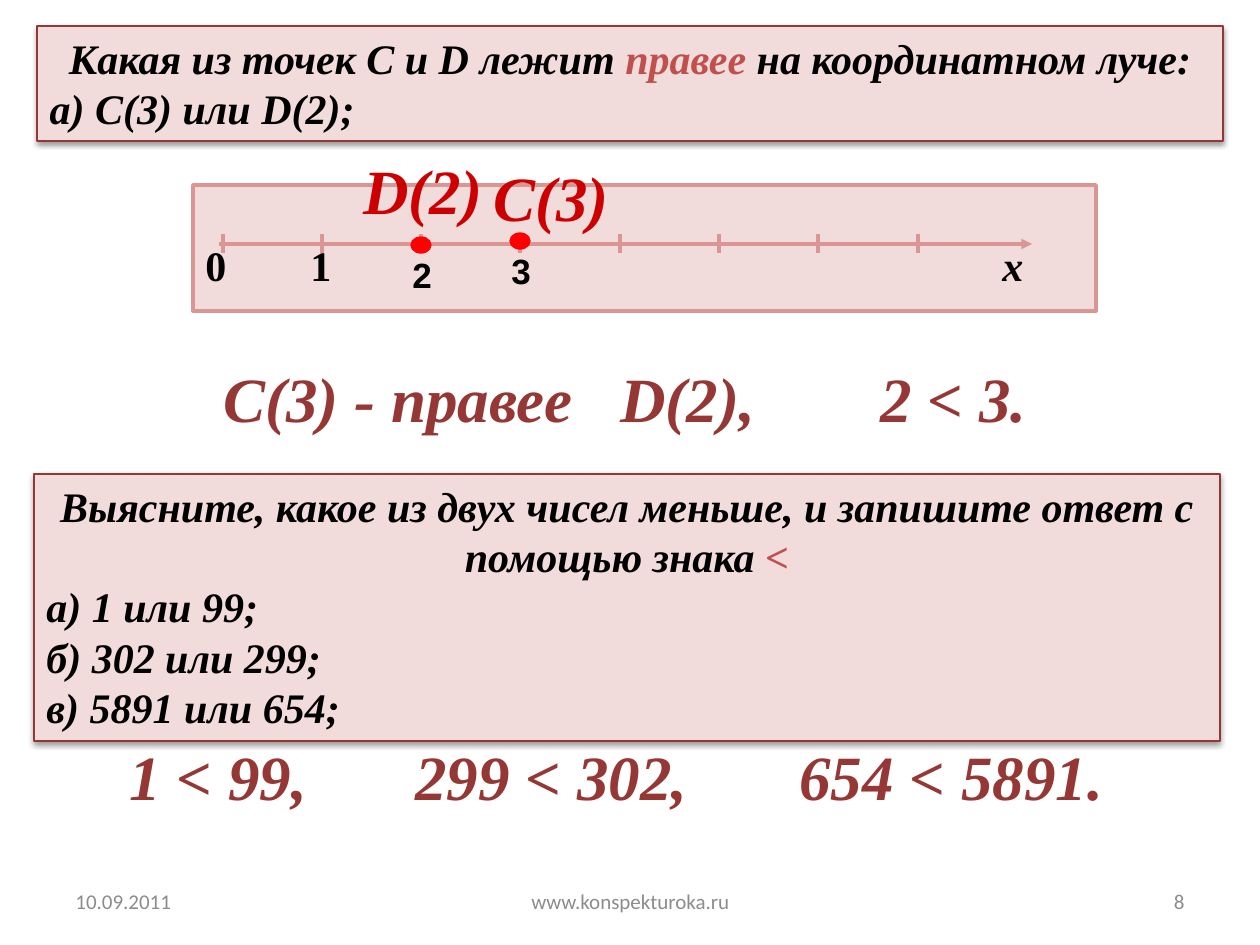
from lxml import etree
from pptx import Presentation
from pptx.dml.color import RGBColor
from pptx.enum.shapes import MSO_CONNECTOR, MSO_SHAPE
from pptx.enum.text import MSO_ANCHOR, MSO_AUTO_SIZE, PP_ALIGN
from pptx.oxml.ns import qn
from pptx.util import Emu, Pt

LEFT, CENTER, RIGHT = PP_ALIGN.LEFT, PP_ALIGN.CENTER, PP_ALIGN.RIGHT
TOP, MIDDLE, BOTTOM = MSO_ANCHOR.TOP, MSO_ANCHOR.MIDDLE, MSO_ANCHOR.BOTTOM
RECTANGLE, OVAL = MSO_SHAPE.RECTANGLE, MSO_SHAPE.OVAL
STRAIGHT = MSO_CONNECTOR.STRAIGHT
NO_AUTOFIT = MSO_AUTO_SIZE.NONE

EMU_PER_PX = 914400 / 126
SERIF = "Times New Roman"
BLACK, PINK, ROSE, WINE = "000000", "F2DCDB", "D99694", "953735"
ACCENT, RED, CRIMSON, GRAY = "C0504D", "FF0000", "CC0000", "8C8C8C"


def px(value):
    return Emu(round(value * EMU_PER_PX))


def rgb(value):
    return RGBColor.from_string(value)


def paint(shape, fill, line, width):
    shape.shadow.inherit = False
    shape.fill.solid()
    shape.fill.fore_color.rgb = rgb(fill)
    shape.line.color.rgb = rgb(line)
    shape.line.width = Pt(width)


def add_drop_shadow(shape):
    effects = shape._element.spPr.find(qn("a:effectLst"))
    outer = etree.SubElement(effects, qn("a:outerShdw"), blurRad=str(Pt(3.1)),
                             dist=str(Pt(1.6)), dir="5400000", rotWithShape="0")
    color = etree.SubElement(outer, qn("a:srgbClr"), val=BLACK)
    etree.SubElement(color, qn("a:alpha"), val="38000")


def set_tabs(paragraph, stops):
    tabs = etree.SubElement(paragraph._p.get_or_add_pPr(), qn("a:tabLst"))
    for stop in stops:
        etree.SubElement(tabs, qn("a:tab"), pos=str(px(stop)), algn="l")


def write(paragraph, runs, size, color=BLACK, face=SERIF, bold=True,
          italic=True, align=LEFT, tabs=()):
    if tabs:
        set_tabs(paragraph, tabs)
    paragraph.alignment = align
    font = paragraph.font
    font.name, font.size = face, Pt(size)
    font.bold, font.italic = bold, italic
    font.color.rgb = rgb(color)
    for text, accent in runs:
        run = paragraph.add_run()
        run.text = text
        if accent:
            run.font.color.rgb = rgb(accent)


def add_label(slide, box, text, size, anchor=TOP, wrap=True, **style):
    frame = slide.shapes.add_textbox(*map(px, box)).text_frame
    frame.word_wrap = wrap
    frame.vertical_anchor = anchor
    write(frame.paragraphs[0], [(text, None)], size, **style)


def fill_task(shape, box, question, items):
    shape.left, shape.top, shape.width, shape.height = map(px, box)
    paint(shape, PINK, WINE, 0.75)
    add_drop_shadow(shape)
    frame = shape.text_frame
    frame.word_wrap = True
    frame.auto_size = NO_AUTOFIT
    frame.vertical_anchor = TOP
    write(frame.paragraphs[0], question, 24, align=CENTER)
    for item in items:
        write(frame.add_paragraph(), [(item, None)], 24)


def add_rose_line(slide, x1, y1, x2, y2):
    line = slide.shapes.add_connector(STRAIGHT, *map(px, (x1, y1, x2, y2)))
    line.line.color.rgb = rgb(ROSE)
    line.line.width = Pt(2)
    etree.SubElement(line._element.spPr, qn("a:effectLst"))
    return line


def add_number_ray(slide, box):
    left, top, width, height = box
    panel = slide.shapes.add_shape(RECTANGLE, *map(px, box))
    paint(panel, PINK, ROSE, 2)
    frame = panel.text_frame
    frame.word_wrap = True
    frame.vertical_anchor = BOTTOM
    frame.margin_bottom = px(21)
    axis = frame.paragraphs[0]
    write(axis, [("0\t1\t", None), ("х", None)], 24, italic=False, tabs=(105, 797))
    axis.runs[-1].font.italic = True

    ray = add_rose_line(slide, left + 26, top + 59, left + 839, top + 59)
    etree.SubElement(ray.line._get_or_add_ln(), qn("a:tailEnd"), type="triangle")
    ticks = [left + 30 + 695 * i // 7 for i in range(8)]
    for x in ticks:
        add_rose_line(slide, x, top + 49, x, top + 68)

    points = [("D(2)", 2, 52, -70, -40), ("C(3)", 3, 48, -39, -33)]
    for name, value, dot_top, name_dx, name_dy in points:
        x = ticks[value]
        dot = slide.shapes.add_shape(OVAL, *map(px, (x - 10, top + dot_top, 20, 16)))
        paint(dot, RED, RED, 0.75)
        add_label(slide, (x + name_dx, top + name_dy, 146, 89), name, 36,
                  color=CRIMSON, wrap=False)
        add_label(slide, (x - 21, top + dot_top + 10, 46, 55), str(value), 20,
                  face="Arial", italic=False)


def add_footer(slide, box):
    left, top, width, height = box
    parts = [("10.09.2011", 0, 294, LEFT),
             ("www.konspekturoka.ru", 368, 399, CENTER),
             ("8", width - 294, 294, RIGHT)]
    for text, dx, part_width, align in parts:
        add_label(slide, (left + dx, top, part_width, height), text, 12, MIDDLE,
                  color=GRAY, face="Calibri", bold=False, italic=False, align=align)


def main():
    deck = Presentation()
    deck.slide_width, deck.slide_height = px(1260), px(945)
    slide = deck.slides.add_slide(deck.slide_layouts[5])

    fill_task(slide.shapes.title, (37, 26, 1186, 115),
              [("Какая из точек С и D лежит ", None), ("правее", ACCENT),
               (" на координатном луче:", None)],
              ["а) С(3) или D(2);"])
    add_number_ray(slide, (193, 185, 903, 126))
    add_label(slide, (211, 353, 837, 89), "C(3) - правее\tD(2),\t2 < 3.", 36,
              color=WINE, tabs=(397, 657))

    comparison = slide.shapes.add_shape(RECTANGLE, 0, 0, 0, 0)
    fill_task(comparison, (34, 474, 1186, 267),
              [("Выясните, какое из двух чисел меньше, и запишите ответ с "
                "помощью знака ", None), ("<", ACCENT)],
              ["а) 1 или 99;", "б) 302 или 299;", "в) 5891 или 654;"])
    add_label(slide, (117, 731, 1024, 89), "1 < 99,\t299 < 302,\t654 < 5891.", 36,
              color=WINE, tabs=(286, 670))
    add_footer(slide, (63, 876, 1134, 50))
    deck.save("out.pptx")


if __name__ == "__main__":
    main()
